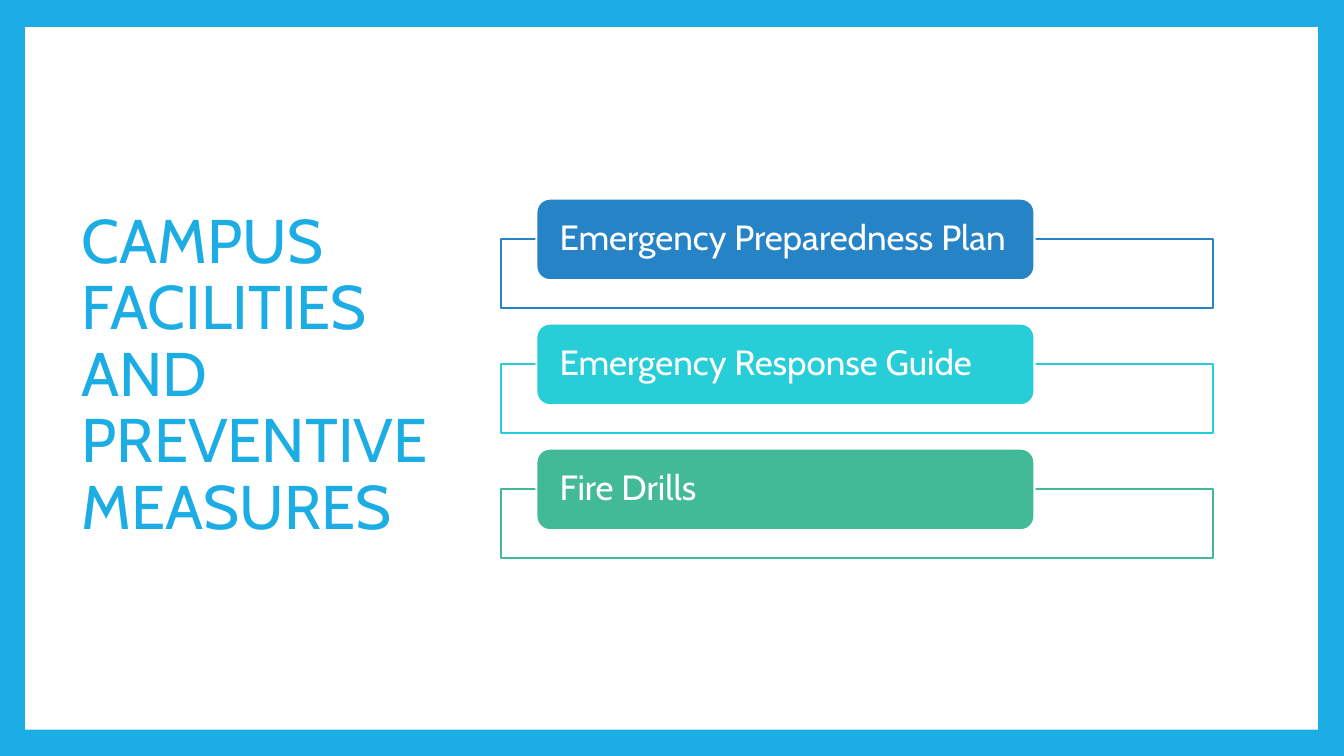
from dataclasses import dataclass

from lxml import etree
from pptx import Presentation
from pptx.dml.color import RGBColor
from pptx.enum.shapes import MSO_SHAPE
from pptx.enum.text import MSO_ANCHOR, MSO_AUTO_SIZE, PP_ALIGN
from pptx.oxml.ns import qn
from pptx.util import Inches, Pt

RECTANGLE = MSO_SHAPE.RECTANGLE
ROUNDED = MSO_SHAPE.ROUNDED_RECTANGLE
MIDDLE = MSO_ANCHOR.MIDDLE
LEFT = PP_ALIGN.LEFT
NO_AUTOFIT = MSO_AUTO_SIZE.NONE

SKY = RGBColor(0x1C, 0xAD, 0xE4)
BLUE = RGBColor(0x26, 0x83, 0xC6)
TURQUOISE = RGBColor(0x27, 0xCE, 0xD7)
GREEN = RGBColor(0x42, 0xBA, 0x97)
WHITE = RGBColor(0xFF, 0xFF, 0xFF)

FONT = "Cabin"
LINE_SPACING = 0.9
OUTLINE = Pt(1.5)


@dataclass(frozen=True)
class Box:
    """A rectangle in inches."""
    left: float
    top: float
    width: float
    height: float

    def down(self, distance: float) -> "Box":
        return Box(self.left, self.top + distance, self.width, self.height)

    def emu(self) -> tuple:
        return tuple(Inches(v) for v in (self.left, self.top, self.width, self.height))


@dataclass(frozen=True)
class Measure:
    label: str
    color: RGBColor


# Grid: one row per measure, each with a frame and a label
PANEL = Box(0.25, 0.27, 12.82, 6.97)
TITLE = Box(0.71, 0.67, 3.68, 6.13)
FRAME = Box(4.97, 2.37, 7.06, 0.69)
LABEL = Box(5.32, 1.97, 4.94, 0.81)
ROW_HEIGHT = 1.24
LABEL_INSET = 0.19

TITLE_LINES = ("CAMPUS FACILITIES AND ", "PREVENTIVE MEASURES")
MEASURES = (
    Measure("Emergency Preparedness Plan", BLUE),
    Measure("Emergency Response Guide", TURQUOISE),
    Measure("Fire Drills", GREEN),
)


def add_box(slide, kind, box: Box, fill: RGBColor, line: RGBColor | None = None):
    shape = slide.shapes.add_shape(kind, *box.emu())
    shape.shadow.inherit = False
    shape.fill.solid()
    shape.fill.fore_color.rgb = fill
    if line is None:
        shape.line.fill.background()
    else:
        shape.line.color.rgb = line
        shape.line.width = OUTLINE
    return shape


def set_opacity(shape, percent: int) -> None:
    color = shape.fill._xPr.find(qn("a:solidFill"))[0]
    etree.SubElement(color, qn("a:alpha")).set("val", str(percent * 1000))


def write(shape, lines: tuple, size: int, color: RGBColor) -> None:
    frame = shape.text_frame
    frame.word_wrap = True
    frame.auto_size = NO_AUTOFIT
    frame.vertical_anchor = MIDDLE
    paragraph = frame.paragraphs[0]
    paragraph.alignment = LEFT
    paragraph.line_spacing = LINE_SPACING
    for index, line in enumerate(lines):
        if index:
            paragraph.add_line_break()
        run = paragraph.add_run()
        run.text = line
        run.font.name = FONT
        run.font.size = Pt(size)
        run.font.color.rgb = color


def add_title(slide) -> None:
    title = slide.shapes.title
    title.left, title.top, title.width, title.height = TITLE.emu()
    write(title, TITLE_LINES, 44, SKY)


def add_measure(slide, measure: Measure, row: int) -> None:
    offset = row * ROW_HEIGHT
    frame = add_box(slide, RECTANGLE, FRAME.down(offset), WHITE, measure.color)
    set_opacity(frame, 90)
    label = add_box(slide, ROUNDED, LABEL.down(offset), measure.color, WHITE)
    text = label.text_frame
    text.margin_left = text.margin_right = Inches(LABEL_INSET)
    text.margin_top = text.margin_bottom = 0
    write(label, (measure.label,), 25, WHITE)


def main() -> None:
    presentation = Presentation()
    presentation.slide_width = Inches(13.33)
    presentation.slide_height = Inches(7.5)
    slide = presentation.slides.add_slide(presentation.slide_layouts.get_by_name("Title Only"))

    # Blue border around a white panel, which lies behind the title
    slide.background.fill.solid()
    slide.background.fill.fore_color.rgb = SKY
    panel = add_box(slide, RECTANGLE, PANEL, WHITE)
    slide.shapes.title._element.addprevious(panel._element)

    # Title on the left, measures on the right
    add_title(slide)
    for row, measure in enumerate(MEASURES):
        add_measure(slide, measure, row)

    presentation.save("out.pptx")


if __name__ == "__main__":
    main()
